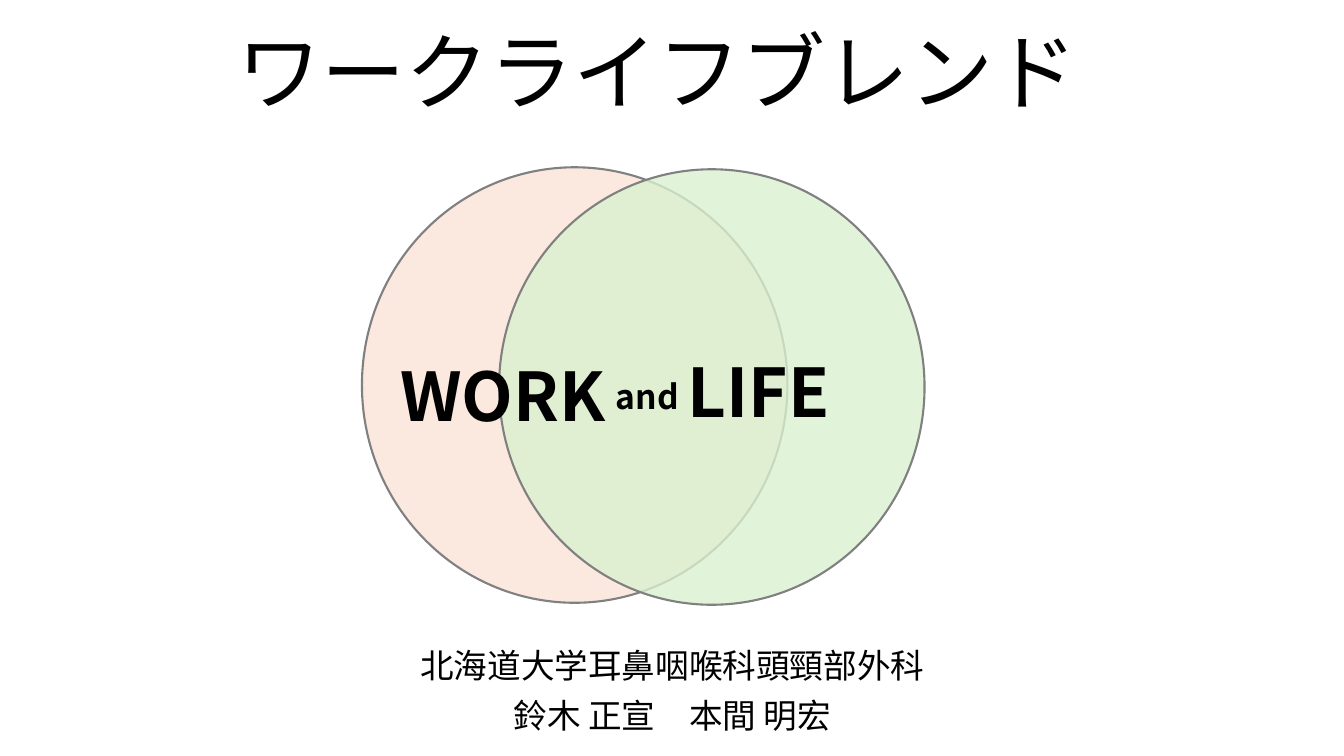
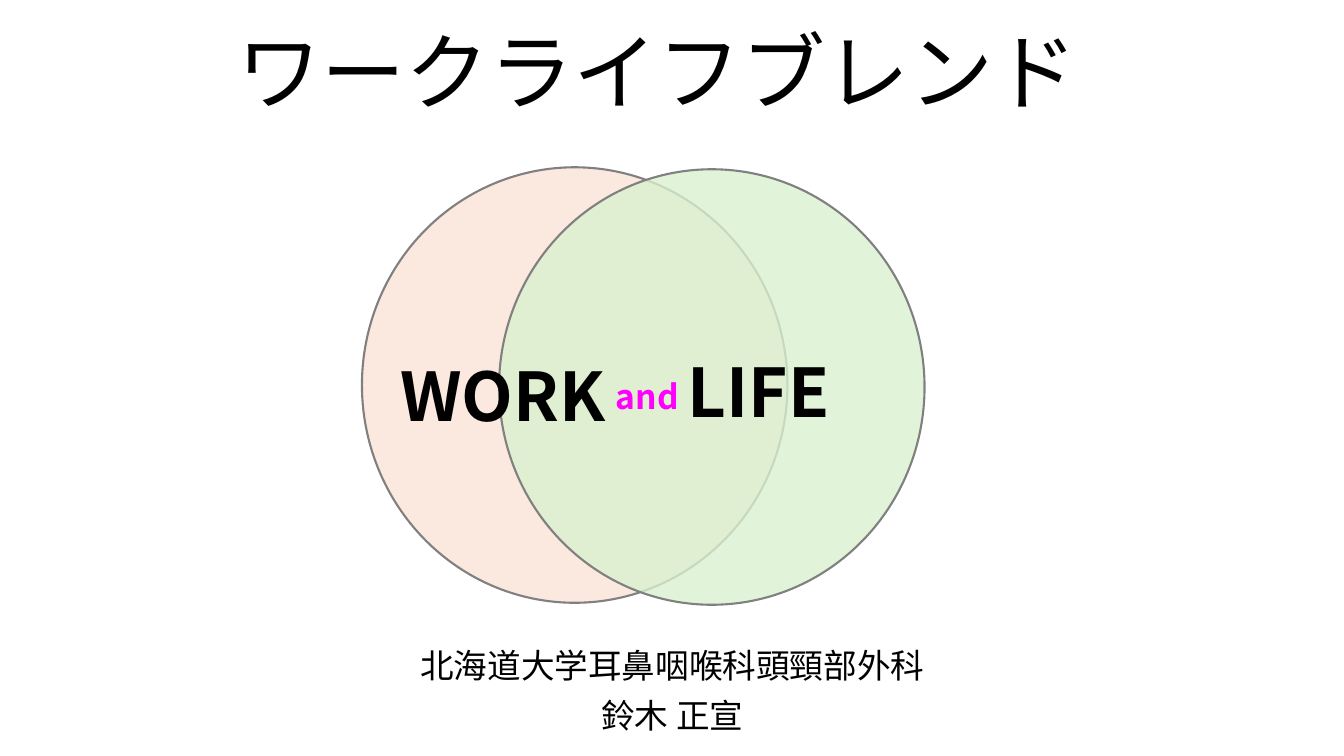
from lxml import etree
from pptx import Presentation
from pptx import util as u
from pptx.dml.color import RGBColor
from pptx.enum import shapes, text
from pptx.oxml.ns import qn

FONT = "Noto Sans CJK JP"
COLORS = {
    "ink": "000000",
    "accent": "FF00FF",
    "outline": "808080",
    "work": "FBE3D6",
    "life": "D9F2D0",
}
SLIDE_BOX = (0, 0, u.Inches(13.33), u.Inches(7.5))
TITLE_AREA = (11.4, 0, 75, 16.8)
VENN_AREA = (26.93, 22.13, 41.86, 57.87)
AUTHOR_AREA = (12.53, 85.2, 75, 14.8)


def color(key):
    """Return the palette colour called key."""
    return RGBColor.from_string(COLORS[key])


def within(box, area):
    """Turn an area in percent of a box into absolute lengths."""
    left, top, width, height = box
    x, y, w, h = (share / 100 for share in area)
    return (round(left + x * width), round(top + y * height),
            round(w * width), round(h * height))


def style(paragraph, size, ink="ink", bold=False, align=text.PP_ALIGN.CENTER):
    """Format a whole paragraph, for Latin and Japanese letters alike."""
    paragraph.alignment = align
    font = paragraph.font
    font.size, font.bold, font.name = u.Pt(size), bold, FONT
    font.color.rgb = color(ink)
    etree.SubElement(font._element, qn("a:ea"), typeface=FONT)


def add_title(slide, box, wording):
    """Move and format the title placeholder."""
    title = slide.shapes.title
    title.left, title.top, title.width, title.height = box
    frame = title.text_frame
    frame.text = wording
    frame.auto_size = text.MSO_AUTO_SIZE.NONE
    frame.vertical_anchor = text.MSO_ANCHOR.BOTTOM
    frame.paragraphs[0].line_spacing = 0.9
    style(frame.paragraphs[0], 60)


def add_authors(slide, box, lines):
    """Write the affiliation and the authors, one paragraph each."""
    frame = slide.shapes.add_textbox(*box).text_frame
    frame.word_wrap = True
    frame.text = "\n".join(lines)
    for paragraph in frame.paragraphs:
        paragraph.line_spacing = 0.9
        paragraph.space_before = u.Pt(10)
        style(paragraph, 24)


def add_circle(slide, box, fill):
    """Draw one translucent outlined circle."""
    circle = slide.shapes.add_shape(shapes.MSO_SHAPE.OVAL, *box)
    circle.shadow.inherit = False
    circle.fill.solid()
    circle.fill.fore_color.rgb = color(fill)
    tint = circle._element.spPr.find(qn("a:solidFill"))[0]
    etree.SubElement(tint, qn("a:alpha"), val="79000")
    circle.line.color.rgb = color("outline")
    circle.line.width = u.Pt(1.5)


def add_word(slide, box, wording, size, ink, align):
    """Write one bold word."""
    frame = slide.shapes.add_textbox(*box).text_frame
    frame.word_wrap = False
    frame.auto_size = text.MSO_AUTO_SIZE.SHAPE_TO_FIT_TEXT
    frame.text = wording
    style(frame.paragraphs[0], size, ink, True, align)


def add_venn(slide, box, and_ink):
    """Draw the overlapping circles and the words across them."""
    for fill, x, y in (("work", 0, 0), ("life", 24.37, 0.46)):
        add_circle(slide, within(box, (x, y, 75.63, 99.54)), fill)
    center, left = text.PP_ALIGN.CENTER, text.PP_ALIGN.LEFT
    for wording, area, size, ink, align in (
        ("WORK", (4.48, 41.71, 41.22, 20.97), 48, "ink", center),
        ("LIFE", (54.12, 40.78, 32.8, 20.97), 48, "ink", center),
        ("and", (43.37, 46.54, 16.31, 11.52), 24, and_ink, left),
    ):
        add_word(slide, within(box, area), wording, size, ink, align)


def add_cover(deck, authors, and_ink):
    """Add one cover slide."""
    slide = deck.slides.add_slide(deck.slide_layouts[5])
    add_title(slide, within(SLIDE_BOX, TITLE_AREA), "ワークライフブレンド")
    add_authors(slide, within(SLIDE_BOX, AUTHOR_AREA),
                ("北海道大学耳鼻咽喉科頭頸部外科", authors))
    add_venn(slide, within(SLIDE_BOX, VENN_AREA), and_ink)


def main():
    """Build and save the presentation."""
    deck = Presentation()
    deck.slide_width, deck.slide_height = SLIDE_BOX[2:]
    add_cover(deck, "鈴木 正宣　本間 明宏", "ink")
    add_cover(deck, "鈴木 正宣", "accent")
    deck.save("out.pptx")


if __name__ == "__main__":
    main()
